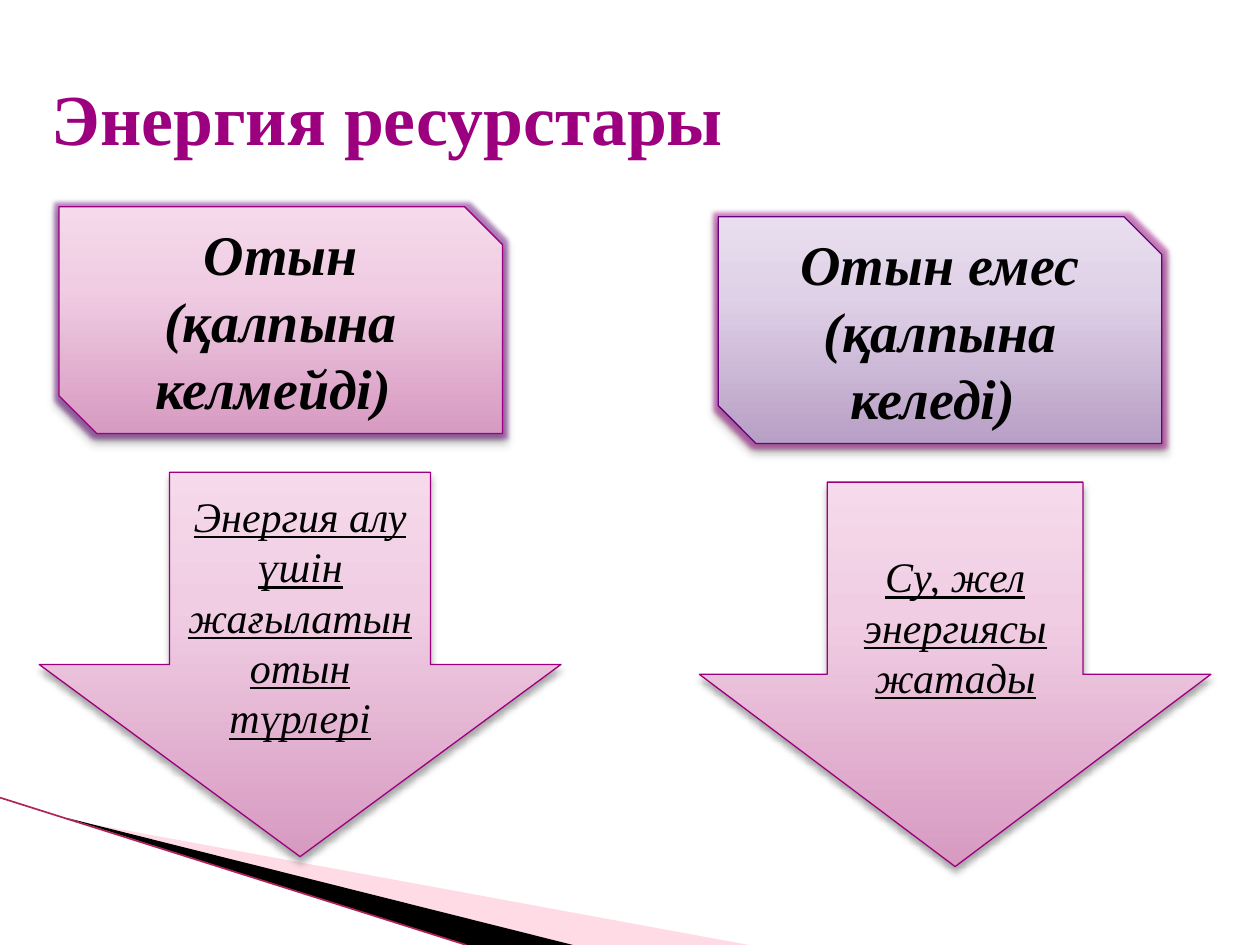
from dataclasses import dataclass

from lxml.etree import SubElement
from pptx import Presentation
from pptx.dml.color import RGBColor
from pptx.enum.shapes import MSO_CONNECTOR, MSO_SHAPE
from pptx.enum.text import MSO_ANCHOR, MSO_AUTO_SIZE, PP_ALIGN
from pptx.oxml import parse_xml
from pptx.oxml.ns import nsdecls, qn
from pptx.util import Cm, Pt

FONT = "Times New Roman"
PLUM, VIOLET, BLACK = "9C007F", "68007F", "000000"
PINK_STOPS = ((0, "D79AC1"), (65, "F0CDE3"), (100, "F6DAEC"))
VIOLET_STOPS = ((0, "B89FC6"), (65, "DFD1E7"), (100, "E9DEEF"))


@dataclass
class Panel:
    kind: MSO_SHAPE
    place: tuple[float, float, float, float]
    lines: list[str]
    size: int
    stops: tuple = PINK_STOPS
    outline: str = PLUM
    glow: str = ""
    bold: bool = False
    underline: bool = False


@dataclass
class Wedge:
    points: list[tuple[float, float]]
    color: str
    alpha: int = 100


PANELS = [
    Panel(MSO_SHAPE.SNIP_2_DIAG_RECTANGLE, (1.19, 4.17, 8.94, 4.57),
          ["Отын", "(қалпына келмейді) "], 32, glow=VIOLET, bold=True),
    Panel(MSO_SHAPE.SNIP_2_DIAG_RECTANGLE, (14.48, 4.37, 8.94, 4.57),
          ["Отын емес", "(қалпына келеді) "], 32,
          stops=VIOLET_STOPS, outline=VIOLET, glow=PLUM, bold=True),
    Panel(MSO_SHAPE.DOWN_ARROW, (0.79, 9.52, 10.52, 7.75),
          ["Энергия алу үшін жағылатын отын түрлері"], 24, underline=True),
    Panel(MSO_SHAPE.DOWN_ARROW, (14.1, 9.72, 10.31, 7.75),
          ["Су, жел энергиясы жатады"], 24, underline=True),
]
WEDGES = [
    Wedge([(1.4, 16.53), (15.1, 19.05), (11.55, 19.05)], "FFA5BF", 40),
    Wedge([(1.35, 16.49), (11.55, 19.05), (9.4, 19.05)], BLACK),
]


def rgb(color: str) -> RGBColor:
    """Turn a hex string into a colour."""
    return RGBColor.from_string(color)


def write(para, text: str, *, size: float, color: str = BLACK, bold: bool = False,
          italic: bool = False, underline: bool = False, align=PP_ALIGN.CENTER) -> None:
    """Write one formatted span into a paragraph."""
    para.alignment = align
    span = para.add_run()
    span.text = text
    font = span.font
    font.name, font.size, font.color.rgb = FONT, Pt(size), rgb(color)
    font.bold, font.italic, font.underline = bold, italic, underline


def add_gradient(shape, stops: tuple) -> None:
    """Fill a shape with a gradient rising from its bottom edge."""
    marks = "".join(f'<a:gs pos="{at * 1000}"><a:srgbClr val="{color}"/></a:gs>'
                    for at, color in stops)
    fill = parse_xml(f'<a:gradFill {nsdecls("a")} rotWithShape="1"><a:gsLst>{marks}</a:gsLst>'
                     '<a:lin ang="16200000" scaled="0"/></a:gradFill>')
    shape._element.spPr.find(qn("a:prstGeom")).addnext(fill)


def add_effects(shape, glow: str) -> None:
    """Give a shape a soft shadow below it and an optional glow."""
    halo = (f'<a:glow rad="63500"><a:srgbClr val="{glow}"><a:alpha val="45000"/>'
            '</a:srgbClr></a:glow>') if glow else ""
    shape._element.spPr.append(parse_xml(
        f'<a:effectLst {nsdecls("a")}>{halo}'
        '<a:outerShdw blurRad="50800" dist="38100" dir="5400000" rotWithShape="0">'
        '<a:srgbClr val="000000"><a:alpha val="35000"/></a:srgbClr>'
        '</a:outerShdw></a:effectLst>'))


def add_panel(page, panel: Panel) -> None:
    """Draw a gradient shape with its centred text."""
    shape = page.shapes.add_shape(panel.kind, *map(Cm, panel.place))
    add_gradient(shape, panel.stops)
    shape.line.color.rgb = rgb(panel.outline)
    shape.line.width = Pt(0.75)
    add_effects(shape, panel.glow)
    box = shape.text_frame
    box.word_wrap = True
    box.vertical_anchor = MSO_ANCHOR.MIDDLE
    for index, text in enumerate(panel.lines):
        para = box.add_paragraph() if index else box.paragraphs[0]
        write(para, text, size=panel.size, bold=panel.bold, italic=True,
              underline=panel.underline)


def add_wedge(page, wedge: Wedge) -> None:
    """Draw one flat corner wedge."""
    start, *rest = [(Cm(x), Cm(y)) for x, y in wedge.points]
    builder = page.shapes.build_freeform(*start)
    builder.add_line_segments(rest, close=True)
    shape = builder.convert_to_shape()
    shape.shadow.inherit = False
    shape.fill.solid()
    shape.fill.fore_color.rgb = rgb(wedge.color)
    shape.line.fill.background()
    tint = shape._element.spPr.find(".//" + qn("a:srgbClr"))
    SubElement(tint, qn("a:alpha")).set("val", str(wedge.alpha * 1000))


def add_corner(page) -> None:
    """Draw the wedges and the edge line in the lower left corner."""
    for wedge in WEDGES:
        add_wedge(page, wedge)
    edge = page.shapes.add_connector(MSO_CONNECTOR.STRAIGHT, Cm(0), Cm(16.08), Cm(9.4), Cm(19.05))
    edge.line.color.rgb = rgb("B0235A")
    edge.line.width = Pt(0.95)
    SubElement(edge._element.spPr, qn("a:effectLst"))


def add_title(page, text: str) -> None:
    """Place and format the title in front of the corner."""
    title = page.shapes.title
    title.left, title.top, title.width, title.height = map(Cm, (0.79, 0.76, 23.34, 3.18))
    box = title.text_frame
    box.word_wrap = True
    box.auto_size = MSO_AUTO_SIZE.NONE
    box.vertical_anchor = MSO_ANCHOR.MIDDLE
    write(box.paragraphs[0], text, size=41, color=PLUM, bold=True, align=PP_ALIGN.LEFT)
    page.shapes._spTree.append(title._element)


def main() -> None:
    """Build the slide and save it."""
    deck = Presentation()
    deck.slide_width, deck.slide_height = Cm(25.4), Cm(19.05)
    page = deck.slides.add_slide(deck.slide_layouts[5])
    add_corner(page)
    add_title(page, "Энергия ресурстары")
    for panel in PANELS:
        add_panel(page, panel)
    deck.save("out.pptx")


if __name__ == "__main__":
    main()
